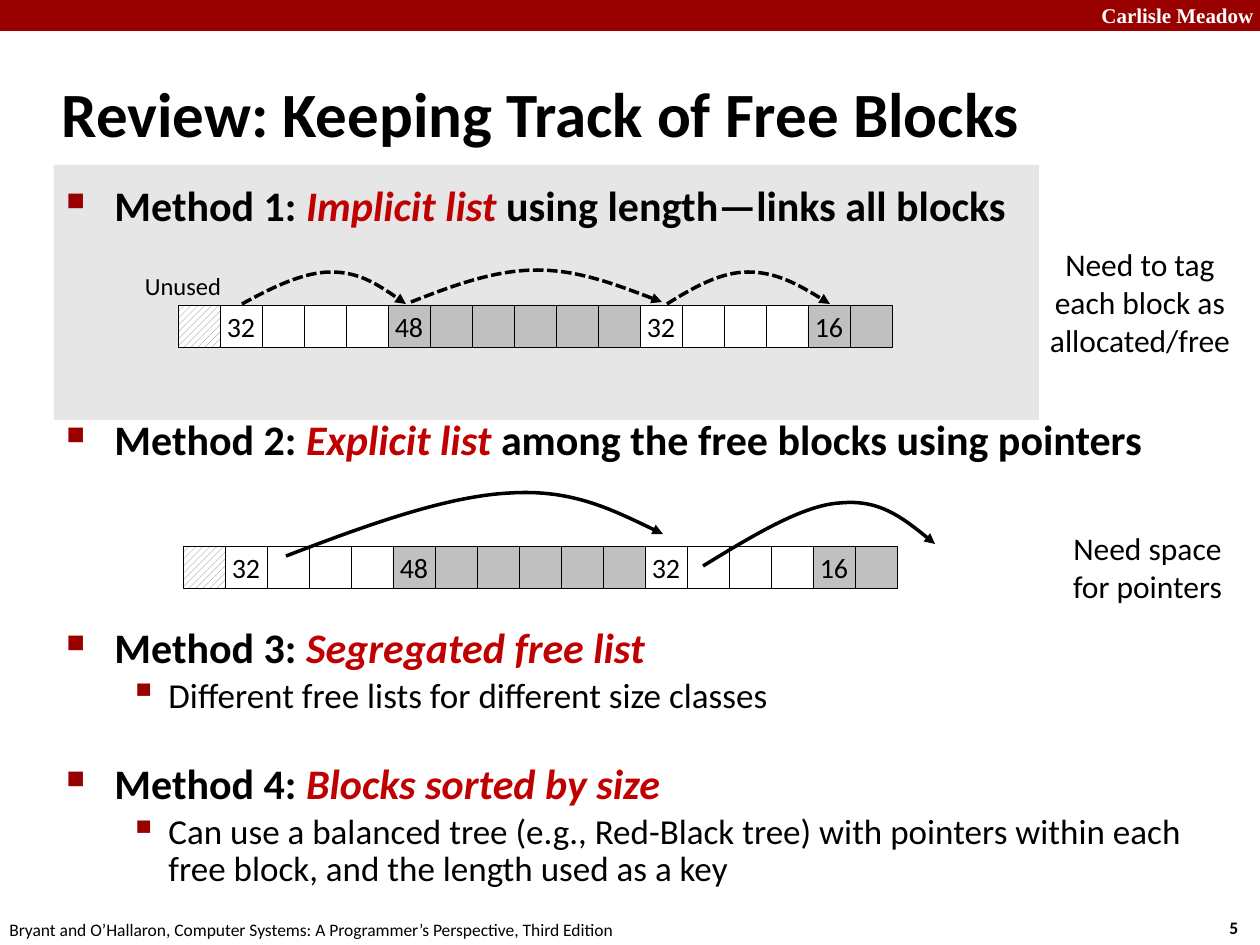
"""Build a slide reviewing four ways to keep track of free heap blocks."""
from dataclasses import dataclass
from lxml.etree import SubElement
from pptx import Presentation
from pptx.dml.color import RGBColor
from pptx.enum.dml import MSO_LINE, MSO_PATTERN
from pptx.enum.shapes import MSO_SHAPE
from pptx.enum.text import MSO_ANCHOR, PP_ALIGN
from pptx.oxml.ns import qn
from pptx.util import Pt

PX = 914400 / 126


@dataclass(frozen=True)
class Theme:
    font: str = "Calibri"
    serif: str = "Times New Roman"
    black: str = "000000"
    white: str = "FFFFFF"
    bar: str = "990000"
    accent: str = "C00000"
    panel: str = "E6E6E6"
    used: str = "C0C0C0"
    hatch: str = "808080"
    title: int = 36
    method: int = 24
    detail: int = 20
    note: int = 18
    cell: int = 16
    label: int = 14
    brand: int = 12
    footer: int = 10


T = Theme()


def add_run(p, text, size, color=T.black, bold=False, italic=False, font=T.font):
    r = p.add_run()
    r.text = text
    r.font.name, r.font.size = font, Pt(size)
    r.font.bold, r.font.italic = bold, italic
    r.font.color.rgb = RGBColor.from_string(color)


def add_rect(shapes, x, y, w, h, fill):
    sp = shapes.add_shape(MSO_SHAPE.RECTANGLE, *(round(v * PX) for v in (x, y, w, h)))
    sp.shadow.inherit = False
    sp.fill.solid()
    sp.fill.fore_color.rgb = RGBColor.from_string(fill)
    sp.line.fill.background()
    return sp


prs = Presentation()
prs.slide_width, prs.slide_height = round(1260 * PX), round(945 * PX)
s = prs.slides.add_slide(prs.slide_layouts[5])

add_rect(s.shapes, 0, 0, 1260, 31, T.bar)
add_rect(s.shapes, 54, 165, 985, 255, T.panel)

title = s.shapes.title
title.left, title.top, title.width, title.height = (round(v * PX) for v in (49, 60, 1046, 105))
title.text_frame.vertical_anchor = MSO_ANCHOR.MIDDLE
p = title.text_frame.paragraphs[0]
p.alignment = PP_ALIGN.LEFT
add_run(p, "Review: Keeping Track of Free Blocks", T.title, bold=True)

body = [
    (0, 0, 1, ["Method 1: ", "Implicit list ", "using length—links all blocks"]),
    (0, 105, 1, ["Method 2: ", "Explicit list ", "among the free blocks using pointers"]),
    (0, 95, 0.83, ["Method 3: ", "Segregated free list"]),
    (1, 4, 0.88, ["Different free lists for different size classes"]),
    (0, 29, 0.83, ["Method 4: ", "Blocks sorted by size"]),
    (1, 4, 0.88, ["Can use a balanced tree (e.g., Red-Black tree) with pointers within each "
                  "free block, and the length used as a key"]),
]
levels = [(48, -48, "60000", "■", T.method), (102, -39, "110000", "▪", T.detail)]
tf = s.shapes.add_textbox(*(round(v * PX) for v in (54, 173, 1143, 741))).text_frame
tf.word_wrap = True
for i, (level, before, spacing, parts) in enumerate(body):
    p = tf.add_paragraph() if i else tf.paragraphs[0]
    p.level, p.space_before, p.line_spacing = level, Pt(before), spacing
    margin, indent, scale, bullet, size = levels[level]
    pPr = p._p.get_or_add_pPr()
    pPr.set("marL", str(round(margin * PX)))
    pPr.set("indent", str(round(indent * PX)))
    SubElement(SubElement(pPr, qn("a:buClr")), qn("a:srgbClr")).set("val", T.bar)
    SubElement(pPr, qn("a:buSzPct")).set("val", scale)
    SubElement(pPr, qn("a:buChar")).set("char", bullet)
    for j, part in enumerate(parts):
        add_run(p, part, size, T.accent if j == 1 else T.black, level == 0, j == 1)

left, center = PP_ALIGN.LEFT, PP_ALIGN.CENTER
texts = [
    (1089, -4, 180, 38, left, ["Carlisle Meadow"], T.brand, T.white, True, T.serif),
    (1217, 911, 47, 34, left, ["5"], T.footer, T.black, True, T.font),
    (-3, 913, 640, 34, left,
     ["Bryant and O’Hallaron, Computer Systems: A Programmer’s Perspective, Third Edition"],
     T.footer, T.black, False, T.font),
    (1036, 239, 208, 127, center, ["Need to tag", "each block as", "allocated/free"],
     T.note, T.black, False, T.font),
    (1057, 523, 181, 89, center, ["Need space", "for pointers"], T.note, T.black, False, T.font),
    (132, 265, 102, 43, center, ["Unused"], T.label, T.black, False, T.font),
]
for x, y, w, h, align, lines, size, color, bold, font in texts:
    tf = s.shapes.add_textbox(*(round(v * PX) for v in (x, y, w, h))).text_frame
    tf.word_wrap = False
    for i, line in enumerate(lines):
        p = tf.add_paragraph() if i else tf.paragraphs[0]
        p.alignment = align
        add_run(p, line, size, color, bold, font=font)

blocks = [("", 1, T.white), ("32", 4, T.white), ("48", 6, T.used),
          ("32", 4, T.white), ("16", 2, T.used)]
cell = 42
for x, y in [(178, 305), (183, 546)]:
    heap = s.shapes.add_group_shape()
    for length, count, fill in blocks:
        for i in range(count):
            sp = add_rect(heap.shapes, x, y, cell, cell, fill)
            sp.line.color.rgb = RGBColor.from_string(T.black)
            sp.line.width = Pt(0.25)
            if not length:
                sp.fill.patterned()
                sp.fill.pattern = MSO_PATTERN.WIDE_UPWARD_DIAGONAL
                sp.fill.fore_color.rgb = RGBColor.from_string(T.hatch)
                sp.fill.back_color.rgb = RGBColor.from_string(T.white)
            elif i == 0:
                tf = sp.text_frame
                tf.word_wrap, tf.vertical_anchor = False, MSO_ANCHOR.MIDDLE
                tf.paragraphs[0].alignment = center
                add_run(tf.paragraphs[0], length, T.cell)
            x += cell

arrows = [
    (True, [(242, 304), (273, 287), (304, 272), (331, 272), (359, 272), (382, 287), (406, 304)]),
    (True, [(411, 302), (452, 286), (494, 270), (537, 270), (578, 270), (620, 286), (662, 302)]),
    (True, [(667, 304), (694, 287), (721, 272), (748, 272), (776, 272), (803, 287), (830, 304)]),
    (False, [(286, 556), (367, 525), (447, 496), (510, 493), (572, 489), (617, 512), (663, 534)]),
    (False, [(703, 566), (752, 536), (803, 505), (840, 503), (879, 499), (907, 521), (935, 544)]),
]
for dashed, points in arrows:
    fb = s.shapes.build_freeform(*points[0], scale=PX)
    fb.add_line_segments(points[1:], close=False)
    sp = fb.convert_to_shape()
    sp.shadow.inherit = False
    sp.fill.background()
    sp.line.color.rgb = RGBColor.from_string(T.black)
    sp.line.width = Pt(2)
    if dashed:
        sp.line.dash_style = MSO_LINE.SQUARE_DOT
    SubElement(sp.line._get_or_add_ln(), qn("a:tailEnd")).set("type", "triangle")
    segments = list(sp._element.iter(qn("a:lnTo")))
    outline = segments[0].getparent()
    for i in range(0, len(segments), 3):
        curve = SubElement(outline, qn("a:cubicBezTo"))
        for segment in segments[i:i + 3]:
            curve.append(segment[0])
            outline.remove(segment)

prs.save("out.pptx")
